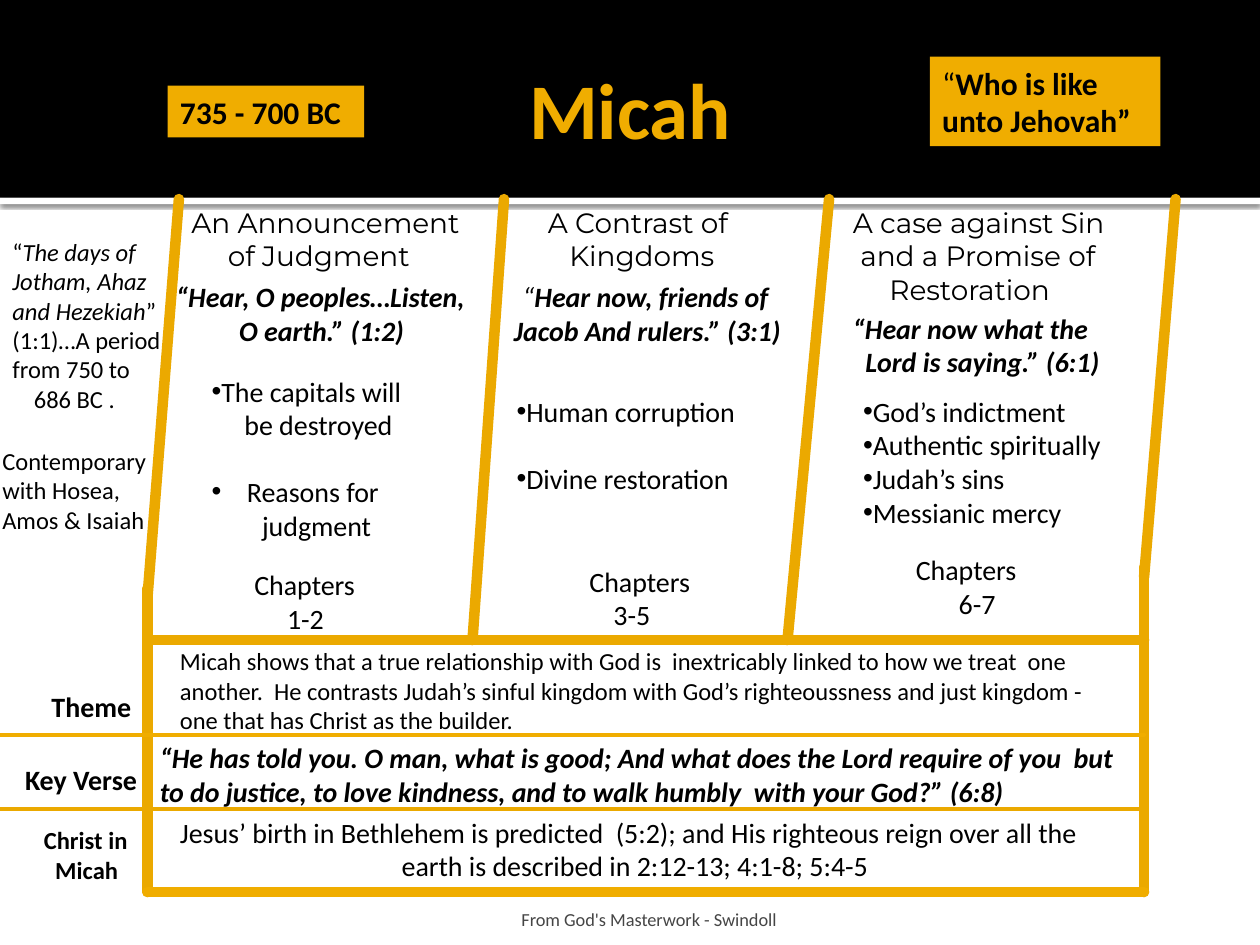
from dataclasses import dataclass

from lxml import etree
from pptx import Presentation
from pptx.dml.color import RGBColor
from pptx.enum.shapes import MSO_CONNECTOR, MSO_SHAPE
from pptx.enum.text import MSO_ANCHOR, MSO_AUTO_SIZE, PP_ALIGN
from pptx.oxml.ns import qn
from pptx.util import Inches, Pt

STRAIGHT = MSO_CONNECTOR.STRAIGHT
RECTANGLE = MSO_SHAPE.RECTANGLE
TOP, MIDDLE, BOTTOM = MSO_ANCHOR.TOP, MSO_ANCHOR.MIDDLE, MSO_ANCHOR.BOTTOM
LEFT, CENTER = PP_ALIGN.LEFT, PP_ALIGN.CENTER
NO_AUTOFIT = MSO_AUTO_SIZE.NONE

COLORS = {"black": "000000", "white": "FFFFFF", "gold": "F0AD00",
          "frame": "EBA900", "gray": "454545"}


@dataclass
class Line:
    """One paragraph: runs are strings or (text, style) pairs."""
    runs: tuple
    indent: float = 0
    bullet: bool = False
    hang: float = 0
    gap: float = 0


@dataclass
class Block:
    """One text area: box is left, top, width, height in inches."""
    box: tuple
    lines: list
    size: float = 16
    style: str = ""
    font: str = "Calibri"
    color: str = "black"
    anchor: int = TOP
    wrap: bool = True


def lines_of(*pairs):
    """Make lines from (text, indent) pairs."""
    return [Line((text,), indent) for text, indent in pairs]


TITLE = Block((0.5, 0.17, 9, 1.37), lines_of(("Micah", 0)), 45, "b", color="gold", anchor=MIDDLE)
BADGES = [
    Block((7.38, 0.45, 1.83, 0.71),
          [Line((("“", ""), "Who is like unto Jehovah”"))], 18, "b", anchor=MIDDLE),
    Block((1.33, 0.68, 1.56, 0.41), lines_of(("735 - 700 BC", 0)), 18, "b", anchor=MIDDLE),
]
HEADINGS = [
    ((1.42, 1.58, 2.69, 0.64), [("An Announcement", 0), ("of Judgment", 0.29)]),
    ((4.25, 1.58, 1.92, 0.64), [("A Contrast of", 0), ("Kingdoms", 0.17)]),
    ((6.67, 1.58, 2.73, 0.91),
     [("A case against Sin", 0), ("and a Promise of", 0.06), ("Restoration", 0.29)]),
]
CHAPTERS = [
    ((1.58, 4.42, 1.58, 0.67), [("Chapters", 0.34), ("1-2", 0.6)]),
    ((4.42, 4.08, 1.25, 0.98), [("Chapters", 0.16), ("3-5", 0.35)]),
    ((7.17, 4.33, 1.58, 0.64), [("Chapters", 0), ("6-7", 0.34)]),
]
QUOTES = [
    Block((1.25, 2.17, 2.83, 0.64),
          lines_of(("“Hear, O peoples…Listen,", 0.05), ("O earth.” (1:2)", 0.55)), style="bi"),
    Block((3.83, 2.17, 2.92, 0.64),
          [Line((("“", "i"), "Hear now, friends of"), 0.22),
           Line(("Jacob And rulers.” (3:1)",), 0.15)], style="bi"),
    Block((6.67, 2.42, 2.32, 0.64),
          lines_of(("“Hear now what the", 0), ("Lord is saying.” (6:1)", 0.1)), style="bi"),
]
LISTS = {
    1: Block((1.58, 2.92, 1.92, 1.45), [
        Line(("The capitals will",), bullet=True),
        Line(("be destroyed",), 0.26),
        Line(("Reasons for",), 0.28, bullet=True, hang=0.28, gap=19),
        Line(("judgment",), 0.4)]),
    2: Block((4, 3.08, 2.23, 0.91), [
        Line(("Human corruption",), bullet=True),
        Line(("Divine restoration",), bullet=True, gap=19)]),
    4: Block((6.75, 3.08, 2.15, 1.18), [
        Line((topic,), bullet=True) for topic in
        ("God’s indictment", "Authentic spiritually", "Judah’s sins", "Messianic mercy")]),
}
SUMMARY = [
    Block((1.33, 5.08, 7.67, 0.81), lines_of((
        "Micah shows that a true relationship with God is  inextricably linked to how we treat  one "
        "another.  He contrasts Judah’s sinful kingdom with God’s righteoussness and just kingdom - "
        "one that has Christ as the builder.", 0)), 14),
    Block((0.17, 5.42, 1.02, 0.37), lines_of(("Theme", 0.14)), style="b"),
    Block((1.17, 5.83, 7.83, 0.64), lines_of((
        "“He has told you. O man, what is good; And what does the Lord require of you  but "
        "to do justice, to love kindness, and to walk humbly  with your God?” (6:8)", 0)),
        style="bi"),
    Block((0, 6, 1.39, 0.37), lines_of(("Key Verse", 0.1)), style="b"),
    Block((0.17, 6.5, 1, 0.57), lines_of(("Christ in", 0.08), ("Micah", 0.17)), 14, "b"),
    Block((1.33, 6.42, 7.56, 0.64), lines_of(
        ("Jesus’ birth in Bethlehem is predicted  (5:2); and His righteous reign over all the", 0),
        ("earth is described in 2:12-13; 4:1-8; 5:4-5", 1.76))),
]
SETTING = [
    Block((0, 1.83, 1.38, 1.51), [
        Line(("“", ("The days of", "i"))), Line((("Jotham, Ahaz", "i"),)),
        Line((("and Hezekiah", "i"), "”")), Line(("(1:1)…A period",)),
        Line(("from 750 to",)), Line(("686 BC .",), 0.17)], 14, wrap=False),
    Block((-0.08, 3.49, 1.44, 0.81), lines_of(("Contemporary with Hosea, Amos & Isaiah", 0)), 14),
]
CREDIT = Block((2.89, 7.08, 6.02, 0.3), lines_of(("From God's Masterwork - Swindoll", 1.15)),
               10.5, color="gray", anchor=BOTTOM)

FRAME_LEFT, FRAME_RIGHT, FRAME_TOP, FRAME_BOTTOM, GRID_TOP = 1.17, 9.08, 5.08, 7.08, 1.58
RULES = [
    (1.42, GRID_TOP, FRAME_LEFT, 4.75, "frame", 6),
    (9.33, GRID_TOP, FRAME_RIGHT, 4.58, "frame", 6),
    (4, GRID_TOP, 3.75, FRAME_TOP, "frame", 6),
    (6.58, GRID_TOP, 6.25, FRAME_TOP, "frame", 6),
    (FRAME_LEFT, FRAME_TOP, FRAME_RIGHT, FRAME_TOP, "frame", 6),
    (FRAME_LEFT, 4.67, FRAME_LEFT, FRAME_BOTTOM, "frame", 6),
    (FRAME_RIGHT, 4.5, FRAME_RIGHT, FRAME_BOTTOM, "frame", 6),
    (FRAME_LEFT, FRAME_BOTTOM, FRAME_RIGHT, FRAME_BOTTOM, "gold", 6),
    (0, 5.83, FRAME_RIGHT, 5.83, "gold", 2.25),
    (0, 6.42, FRAME_RIGHT, 6.42, "frame", 2.25),
]


def rgb(name):
    return RGBColor.from_string(COLORS[name])


def write(shape, block, align=LEFT):
    shape.left, shape.top, shape.width, shape.height = map(Inches, block.box)
    frame = shape.text_frame
    frame.auto_size, frame.word_wrap = NO_AUTOFIT, block.wrap
    frame.vertical_anchor = block.anchor
    for number, line in enumerate(block.lines):
        paragraph = frame.add_paragraph() if number else frame.paragraphs[0]
        paragraph.alignment = align
        paragraph.space_before = Pt(line.gap)
        properties = paragraph._p.get_or_add_pPr()
        properties.set("marL", str(Inches(line.indent)))
        properties.set("indent", str(-Inches(line.hang)))
        if line.bullet:
            etree.SubElement(properties, qn("a:buChar"), char="•")
        else:
            etree.SubElement(properties, qn("a:buNone"))
        for part in line.runs:
            text, style = (part, block.style) if isinstance(part, str) else part
            run = paragraph.add_run()
            run.text = text
            run.font.name, run.font.size = block.font, Pt(block.size)
            run.font.bold, run.font.italic = "b" in style, "i" in style
            run.font.color.rgb = rgb(block.color)


def add_panel(slide, box, fill):
    panel = slide.shapes.add_shape(RECTANGLE, *map(Inches, box))
    panel.shadow.inherit = False
    panel.fill.solid()
    panel.fill.fore_color.rgb = rgb(fill)
    panel.line.fill.background()
    return panel


def add_rule(slide, x1, y1, x2, y2, color, width):
    rule = slide.shapes.add_connector(STRAIGHT, *map(Inches, (x1, y1, x2, y2)))
    rule.line.color.rgb, rule.line.width = rgb(color), Pt(width)
    properties = rule._element.spPr
    properties.find(qn("a:ln")).set("cap", "rnd")
    etree.SubElement(properties, qn("a:effectLst"))


def add_header(slide):
    edge = add_panel(slide, (0, 1.57, 10, 0.05), "white")
    effects = edge._element.spPr.find(qn("a:effectLst"))
    shadow = etree.SubElement(effects, qn("a:outerShdw"), blurRad=str(Pt(2.5)),
                              dist=str(Pt(0.8)), dir="5400000", rotWithShape="0")
    tint = etree.SubElement(shadow, qn("a:srgbClr"), val=COLORS["black"])
    etree.SubElement(tint, qn("a:alpha"), val="60000")
    band = add_panel(slide, (0, 0, 10, 1.57), "black")
    for depth, panel in enumerate((edge, band), 2):
        slide.shapes._spTree.insert(depth, panel._element)


def main():
    """Build the overview chart of the book of Micah."""
    deck = Presentation()
    deck.slide_width, deck.slide_height = Inches(10), Inches(7.5)
    slide = deck.slides.add_slide(deck.slide_layouts.get_by_name("Comparison"))
    add_header(slide)
    write(slide.shapes.title, TITLE, CENTER)
    for placeholder in list(slide.placeholders)[1:]:
        index = placeholder.placeholder_format.idx
        if index in LISTS:
            write(placeholder, LISTS[index])
        else:
            slide.shapes._spTree.remove(placeholder._element)
    for rule in RULES:
        add_rule(slide, *rule)
    headings = [Block(box, lines_of(*pairs), font="Montserrat") for box, pairs in HEADINGS]
    chapters = [Block(box, lines_of(*pairs), anchor=BOTTOM) for box, pairs in CHAPTERS]
    for block in headings + QUOTES + chapters + SUMMARY + SETTING:
        write(slide.shapes.add_textbox(0, 0, 0, 0), block)
    for badge in BADGES:
        write(add_panel(slide, badge.box, "gold"), badge)
    credit = slide.shapes.add_textbox(0, 0, 0, 0)
    write(credit, CREDIT)
    credit.text_frame.margin_bottom = 0
    deck.save("out.pptx")


if __name__ == "__main__":
    main()
